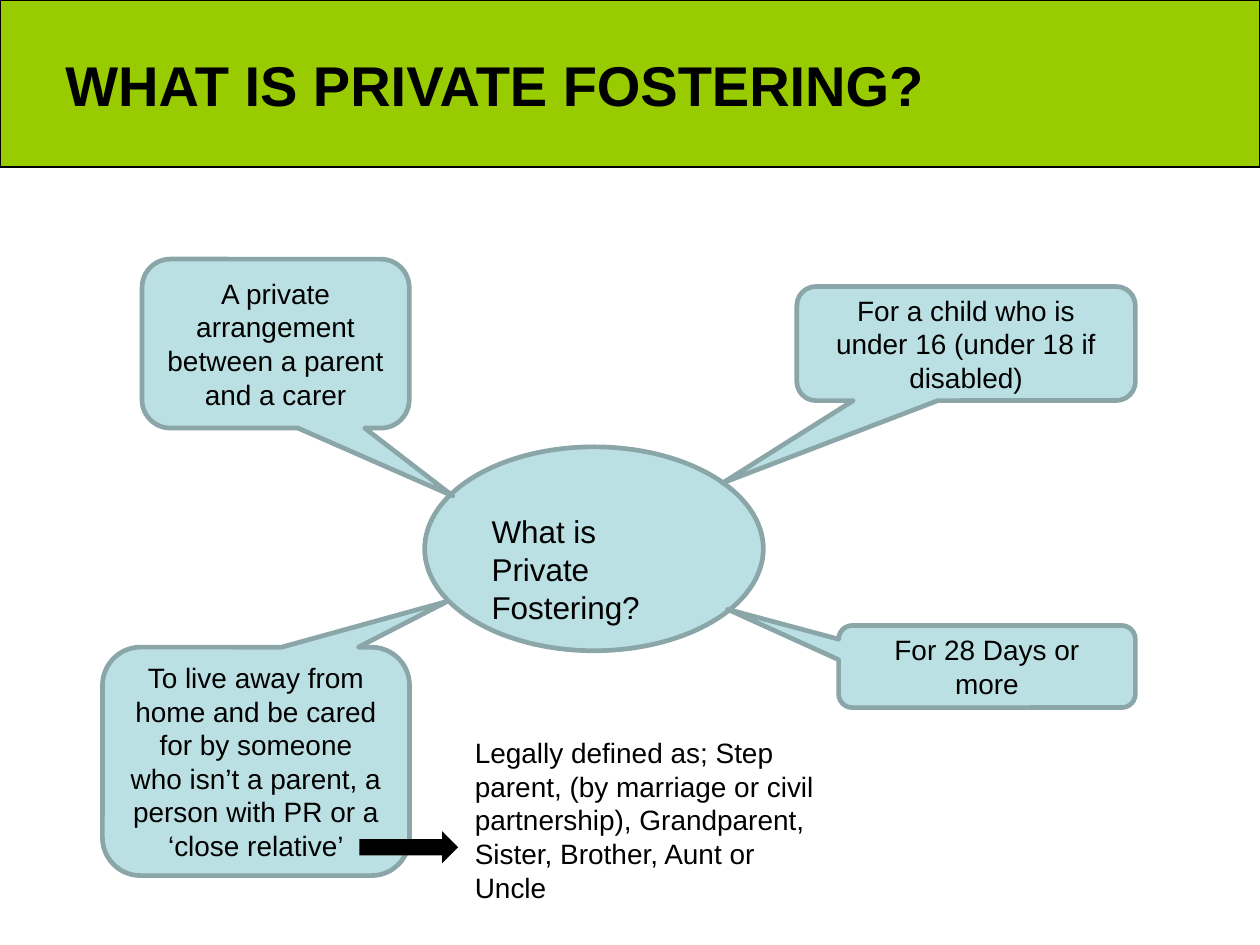
from pptx import Presentation
from pptx.dml.color import RGBColor
from pptx.enum.shapes import MSO_SHAPE
from pptx.enum.text import MSO_ANCHOR, PP_ALIGN
from pptx.util import Pt

RECTANGLE = MSO_SHAPE.RECTANGLE
ELLIPSE = MSO_SHAPE.OVAL
CALLOUT = MSO_SHAPE.ROUNDED_RECTANGULAR_CALLOUT
RIGHT_ARROW = MSO_SHAPE.RIGHT_ARROW
MIDDLE, TOP = MSO_ANCHOR.MIDDLE, MSO_ANCHOR.TOP
CENTER, LEFT = PP_ALIGN.CENTER, PP_ALIGN.LEFT

SLIDE_WIDTH, SLIDE_HEIGHT, BAND_HEIGHT = 540, 405, 71.5
FONT = "Arial"
BLACK, GREEN, PALE_BLUE, GREY_BLUE = "000000", "99CC00", "BBE0E3", "8AA6A8"
CORNER = 0.167

CALLOUTS = [
    ("A private arrangement between a parent and a carer",
     (60.9, 39.6, 114.5, 72.4), (0.663, 0.902)),
    ("To live away from home and be cared for by someone who isn’t a parent, "
     "a person with PR or a ‘close relative’",
     (43.9, 205.9, 131.6, 97.9), (0.624, -0.701)),
    ("For 28 Days or more", (359.4, 196.6, 127.2, 35.2), (-0.874, -0.697)),
    ("For a child who is under 16 (under 18 if disabled)",
     (341.5, 51.3, 145.1, 48.9), (-0.719, 1.222)),
]


def color(value):
    """Return the colour for a hex string."""
    return RGBColor.from_string(value)


def inside(box, left, top, width, height):
    """Return lengths for a part placed relative to the corner of a box."""
    return Pt(box[0] + left), Pt(box[1] + top), Pt(width), Pt(height)


def write_text(shape, text, size=12, bold=False, align=LEFT, anchor=TOP):
    """Write one formatted paragraph into a shape."""
    frame = shape.text_frame
    frame.word_wrap = True
    frame.vertical_anchor = anchor
    paragraph = frame.paragraphs[0]
    paragraph.alignment = align
    run = paragraph.add_run()
    run.text = text
    run.font.name = FONT
    run.font.size = Pt(size)
    run.font.bold = bold
    run.font.color.rgb = color(BLACK)


def add_figure(slide, kind, place, fill, line=None, line_width=2):
    """Add a filled preset shape with an optional outline."""
    shape = slide.shapes.add_shape(kind, *place)
    shape.shadow.inherit = False
    shape.fill.solid()
    shape.fill.fore_color.rgb = color(fill)
    if line:
        shape.line.color.rgb = color(line)
        shape.line.width = Pt(line_width)
    else:
        shape.line.fill.background()
    return shape


def add_header(slide, box):
    """Draw the green band and set the title on it."""
    band = add_figure(slide, RECTANGLE, inside(box, 0, 0, *box[2:]), GREEN, BLACK, 0.75)
    title = slide.shapes.title
    title.element.addprevious(band.element)
    title.left, title.top, title.width, title.height = inside(box, 0, 2.2, 424, 67.7)
    write_text(title, "WHAT IS PRIVATE FOSTERING?", size=24, bold=True,
               align=CENTER, anchor=MIDDLE)


def add_mind_map(slide, box):
    """Draw the central question, its callouts and the legal definition."""
    add_figure(slide, ELLIPSE, inside(box, 182, 120, 145.1, 87.4), PALE_BLUE, GREY_BLUE)
    question = slide.shapes.add_textbox(*inside(box, 203.6, 144.5, 101.5, 56.2))
    write_text(question, "What is Private Fostering?", size=13.5)

    for text, place, pointer in CALLOUTS:
        callout = add_figure(slide, CALLOUT, inside(box, *place), PALE_BLUE, GREY_BLUE)
        for index, value in enumerate((*pointer, CORNER)):
            callout.adjustments[index] = value
        write_text(callout, text, align=CENTER, anchor=MIDDLE)

    add_figure(slide, RIGHT_ARROW, inside(box, 154, 284.7, 42.4, 13.9), BLACK)
    definition = slide.shapes.add_textbox(*inside(box, 196.4, 240.3, 162.8, 79.9))
    write_text(definition, "Legally defined as; Step parent, (by marriage or civil "
               "partnership), Grandparent, Sister, Brother, Aunt or Uncle")


def main():
    """Build and save the slide."""
    presentation = Presentation()
    presentation.slide_width = Pt(SLIDE_WIDTH)
    presentation.slide_height = Pt(SLIDE_HEIGHT)
    slide = presentation.slides.add_slide(presentation.slide_layouts[5])
    add_header(slide, (0, 0, SLIDE_WIDTH, BAND_HEIGHT))
    add_mind_map(slide, (0, BAND_HEIGHT, SLIDE_WIDTH, SLIDE_HEIGHT - BAND_HEIGHT))
    presentation.save("out.pptx")


if __name__ == "__main__":
    main()
